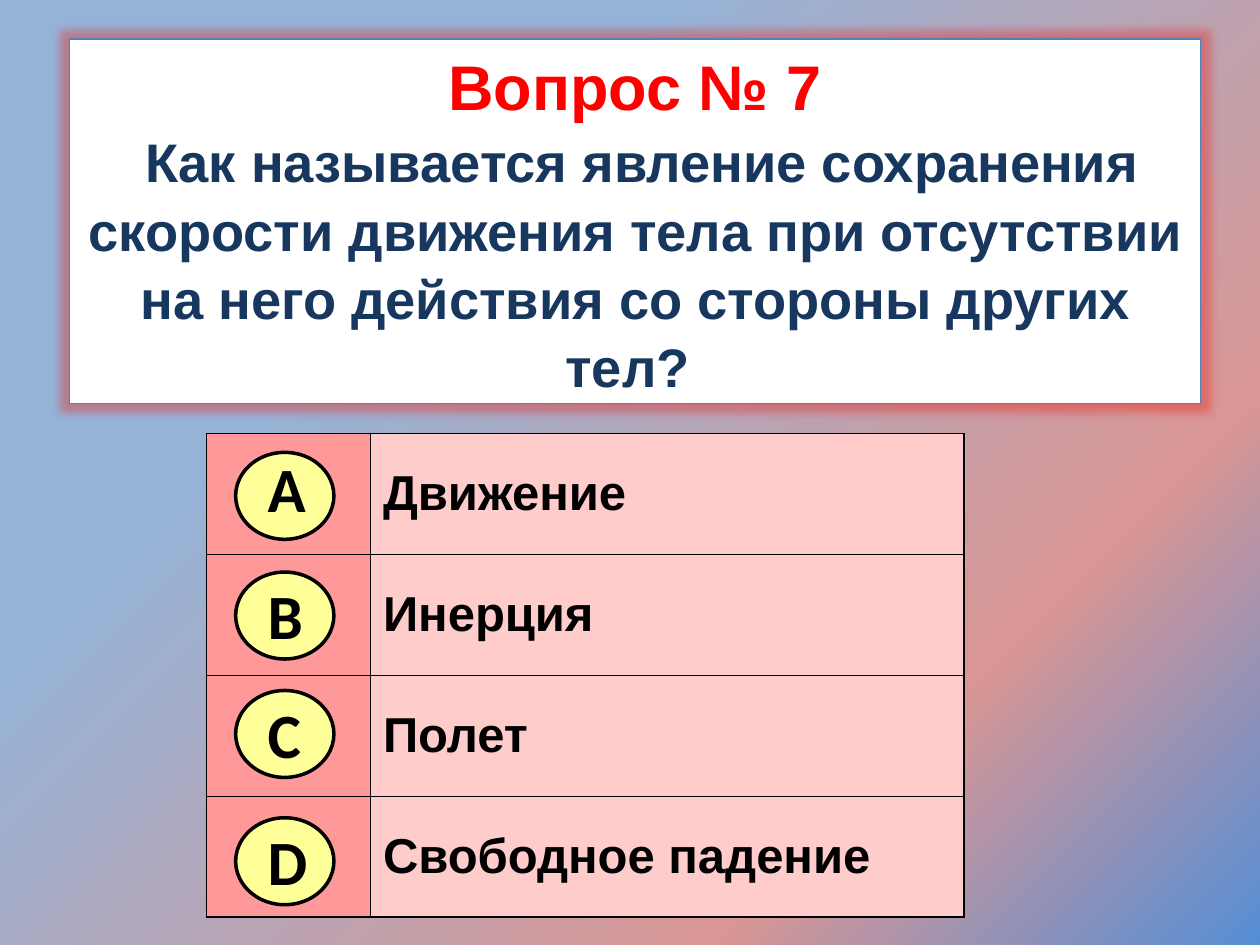
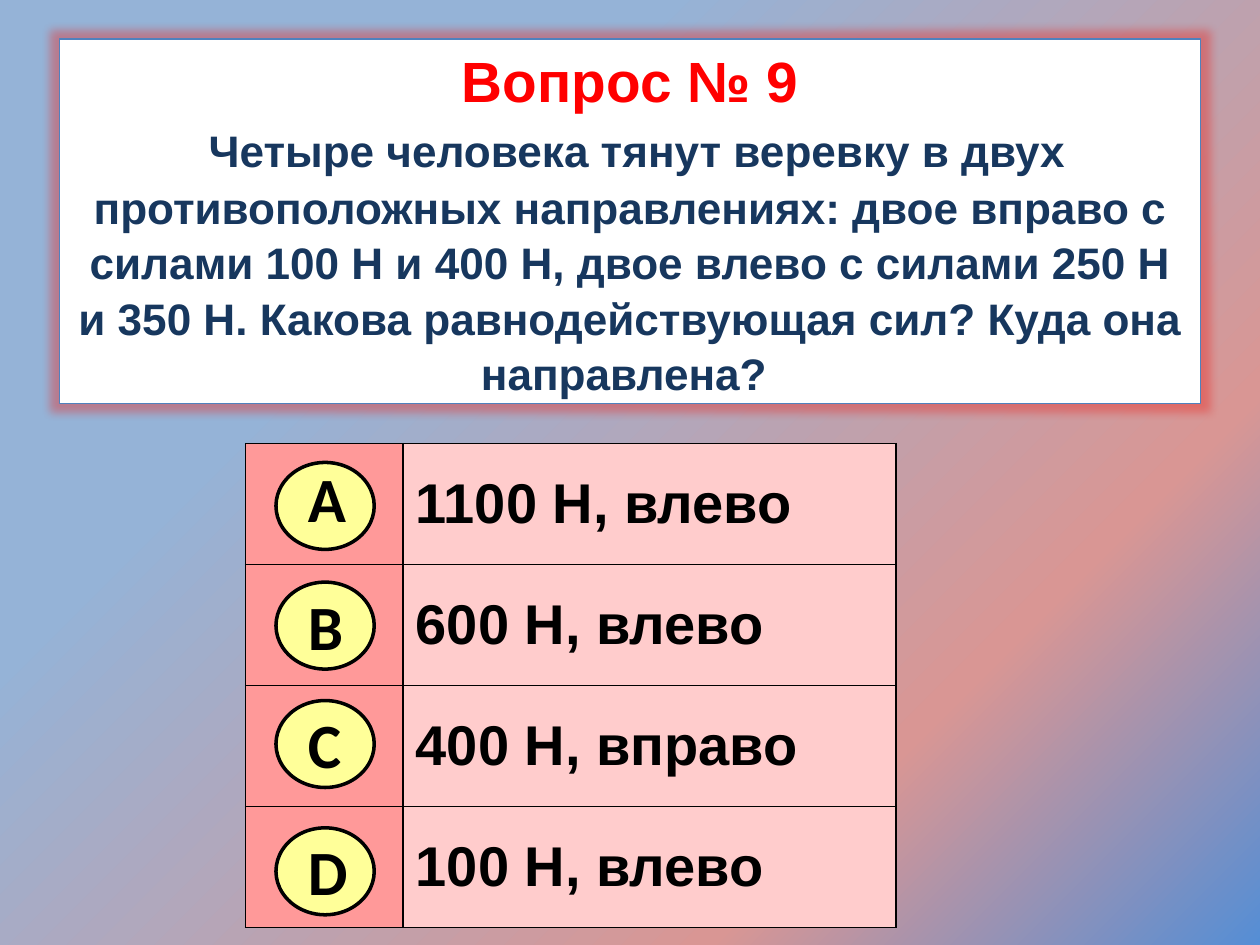
from dataclasses import dataclass

import pptx
import pptx.dml.color
import pptx.enum.shapes
import pptx.enum.text
import pptx.oxml
import pptx.presentation
import pptx.shapes.group
import pptx.slide
import pptx.table
import pptx.text.text
import pptx.util
from pptx.util import Inches

# Shared colours, fonts and sizes
WHITE, BLACK, RED, NAVY = "FFFFFF", "000000", "FF0000", "17375E"
TITLE_LINE, GLOW = "4F81BD", "EB2722"
LETTER_CELL, ANSWER_CELL, BADGE_FILL = "FF9999", "FFCCCC", "FFFF99"
BACKGROUND_STOPS = [(0, "558ED5"), (25, "D99694"), (70, "95B3D7"), (100, "95B3D7")]
TEXT_FONT, BADGE_FONT = "Arial", "Calibri"
DRAWING_NAMESPACE = 'xmlns:a="http://schemas.openxmlformats.org/drawingml/2006/main"'

TITLE_TOP, TITLE_HEIGHT = 0.31, 2.89
ROW_HEIGHT = 0.96
BADGE_WIDTH, BADGE_HEIGHT = 0.78, 0.69
LETTER_WIDTH, LETTER_HEIGHT = 0.47, 0.71


@dataclass(frozen=True)
class Badge:
    letter: str
    top: float  # below the top of the table
    letter_shift: float  # from the top of the ellipse


@dataclass(frozen=True)
class Question:
    heading: str
    gap_font: str
    gap_color: str
    gap_bold: bool
    text: str
    title_sizes: tuple[float, float, float]  # heading, gap, text
    title_left: float
    title_width: float
    table_left: float
    table_top: float
    column_widths: tuple[float, float]
    badge_left: float
    answer_size: float
    answers: tuple[str, str, str, str]


BADGES = [
    Badge("А", 0.15, -0.07),
    Badge("В", 1.10, -0.01),
    Badge("С", 2.04, -0.01),
    Badge("D", 3.05, -0.01),
]

QUESTIONS = [
    Question(
        heading="Вопрос № 7",
        gap_font=BADGE_FONT, gap_color=BLACK, gap_bold=False,
        text="Как называется явление сохранения скорости движения тела "
             "при отсутствии на него действия со стороны других тел? ",
        title_sizes=(36, 32, 31), title_left=0.55, title_width=8.98,
        table_left=1.64, table_top=3.44, column_widths=(1.3, 4.71),
        badge_left=1.87, answer_size=28,
        answers=("Движение", "Инерция", "Полет", "Свободное падение"),
    ),
    Question(
        heading="Вопрос № 9",
        gap_font=TEXT_FONT, gap_color=NAVY, gap_bold=True,
        text="Четыре человека тянут веревку в двух противоположных "
             "направлениях: двое вправо с силами 100 Н и 400 Н, двое влево "
             "с силами 250 Н и 350 Н. Какова равнодействующая сил? "
             "Куда она направлена? ",
        title_sizes=(32.4, 28.8, 25.2), title_left=0.47, title_width=9.06,
        table_left=1.95, table_top=3.52, column_widths=(1.25, 3.91),
        badge_left=2.19, answer_size=32,
        answers=("1100 Н, влево", "600 Н, влево", "400 Н, вправо", "100 Н, влево"),
    ),
]


def rgb(color: str) -> pptx.dml.color.RGBColor:
    return pptx.dml.color.RGBColor.from_string(color)


def add_text(paragraph: pptx.text.text._Paragraph, text: str, *, size: float,
             font: str = TEXT_FONT, color: str = BLACK, bold: bool = True) -> None:
    run = paragraph.add_run()
    run.text = text
    run.font.size = pptx.util.Pt(size)
    run.font.name = font
    run.font.bold = bold
    run.font.color.rgb = rgb(color)


def set_background(master: pptx.slide.SlideMaster) -> None:
    """Radial gradient spreading from the bottom right corner."""
    fill = master.background.fill
    fill.gradient()
    stops = "".join(
        f'<a:gs pos="{position * 1000}"><a:srgbClr val="{color}"/></a:gs>'
        for position, color in BACKGROUND_STOPS
    )
    gradient = pptx.oxml.parse_xml(
        f'<a:gradFill {DRAWING_NAMESPACE} rotWithShape="1"><a:gsLst>{stops}</a:gsLst>'
        '<a:path path="circle"><a:fillToRect l="100000" t="100000"/></a:path></a:gradFill>'
    )
    properties = master.element.cSld.bg.bgPr
    properties.replace(properties.find(pptx.oxml.ns.qn("a:gradFill")), gradient)


def format_title(slide: pptx.slide.Slide, question: Question) -> None:
    title = slide.shapes.title
    title.left, title.top = Inches(question.title_left), Inches(TITLE_TOP)
    title.width, title.height = Inches(question.title_width), Inches(TITLE_HEIGHT)
    title.fill.solid()
    title.fill.fore_color.rgb = rgb(WHITE)
    title.line.color.rgb = rgb(TITLE_LINE)
    title.line.width = pptx.util.Pt(0.75)
    title.element.spPr.append(pptx.oxml.parse_xml(
        f'<a:effectLst {DRAWING_NAMESPACE}><a:glow rad="139700"><a:srgbClr val="{GLOW}">'
        '<a:alpha val="40000"/></a:srgbClr></a:glow></a:effectLst>'
    ))

    frame = title.text_frame
    frame.word_wrap = True
    frame.auto_size = pptx.enum.text.MSO_AUTO_SIZE.NONE
    frame.vertical_anchor = pptx.enum.text.MSO_ANCHOR.MIDDLE
    paragraph = frame.paragraphs[0]
    paragraph.alignment = pptx.enum.text.PP_ALIGN.CENTER
    paragraph.line_spacing = 1.05
    heading_size, gap_size, text_size = question.title_sizes
    add_text(paragraph, question.heading, size=heading_size, color=RED)
    paragraph.add_line_break()
    add_text(paragraph, " ", size=gap_size, font=question.gap_font,
             color=question.gap_color, bold=question.gap_bold)
    add_text(paragraph, question.text, size=text_size, color=NAVY)


def format_cell(cell: pptx.table._Cell, color: str) -> None:
    cell.vertical_anchor = pptx.enum.text.MSO_ANCHOR.MIDDLE
    properties = cell._tc.get_or_add_tcPr()
    for side in ("lnL", "lnR", "lnT", "lnB"):
        properties.append(pptx.oxml.parse_xml(
            f'<a:{side} {DRAWING_NAMESPACE} w="12700"><a:solidFill>'
            f'<a:srgbClr val="{BLACK}"/></a:solidFill></a:{side}>'
        ))
    cell.fill.solid()
    cell.fill.fore_color.rgb = rgb(color)


def add_answer_table(slide: pptx.slide.Slide, question: Question) -> None:
    row_count = len(question.answers)
    table = slide.shapes.add_table(
        row_count, 2, Inches(question.table_left), Inches(question.table_top),
        Inches(sum(question.column_widths)), Inches(ROW_HEIGHT * row_count),
    ).table
    table.first_row = table.horz_banding = False
    for column, width in zip(table.columns, question.column_widths):
        column.width = Inches(width)
    for row, answer in zip(table.rows, question.answers):
        row.height = Inches(ROW_HEIGHT)
        letter_cell, answer_cell = row.cells
        format_cell(letter_cell, LETTER_CELL)
        format_cell(answer_cell, ANSWER_CELL)
        add_text(answer_cell.text_frame.paragraphs[0], answer, size=question.answer_size)


def add_badge(slide: pptx.slide.Slide, badge: Badge, left: float, top: float) -> None:
    group = slide.shapes.add_group_shape()
    ellipse = group.shapes.add_shape(
        pptx.enum.shapes.MSO_SHAPE.OVAL,
        Inches(left), Inches(top), Inches(BADGE_WIDTH), Inches(BADGE_HEIGHT),
    )
    ellipse.shadow.inherit = False
    ellipse.fill.solid()
    ellipse.fill.fore_color.rgb = rgb(BADGE_FILL)
    ellipse.line.color.rgb = rgb(BLACK)
    ellipse.line.width = pptx.util.Pt(2)

    letter_box = group.shapes.add_textbox(
        Inches(left + (BADGE_WIDTH - LETTER_WIDTH) / 2), Inches(top + badge.letter_shift),
        Inches(LETTER_WIDTH), Inches(LETTER_HEIGHT),
    )
    frame = letter_box.text_frame
    frame.word_wrap = True
    frame.auto_size = pptx.enum.text.MSO_AUTO_SIZE.SHAPE_TO_FIT_TEXT
    add_text(frame.paragraphs[0], badge.letter, size=36, font=BADGE_FONT)


def add_question_slide(presentation: pptx.presentation.Presentation,
                       question: Question) -> None:
    slide = presentation.slides.add_slide(
        presentation.slide_layouts.get_by_name("Title Only"))
    format_title(slide, question)
    add_answer_table(slide, question)
    for badge in BADGES:
        add_badge(slide, badge, question.badge_left, question.table_top + badge.top)


def main() -> None:
    presentation = pptx.Presentation()
    presentation.slide_width, presentation.slide_height = Inches(10), Inches(7.5)
    set_background(presentation.slide_master)
    for question in QUESTIONS:
        add_question_slide(presentation, question)
    presentation.save("out.pptx")


if __name__ == "__main__":
    main()
